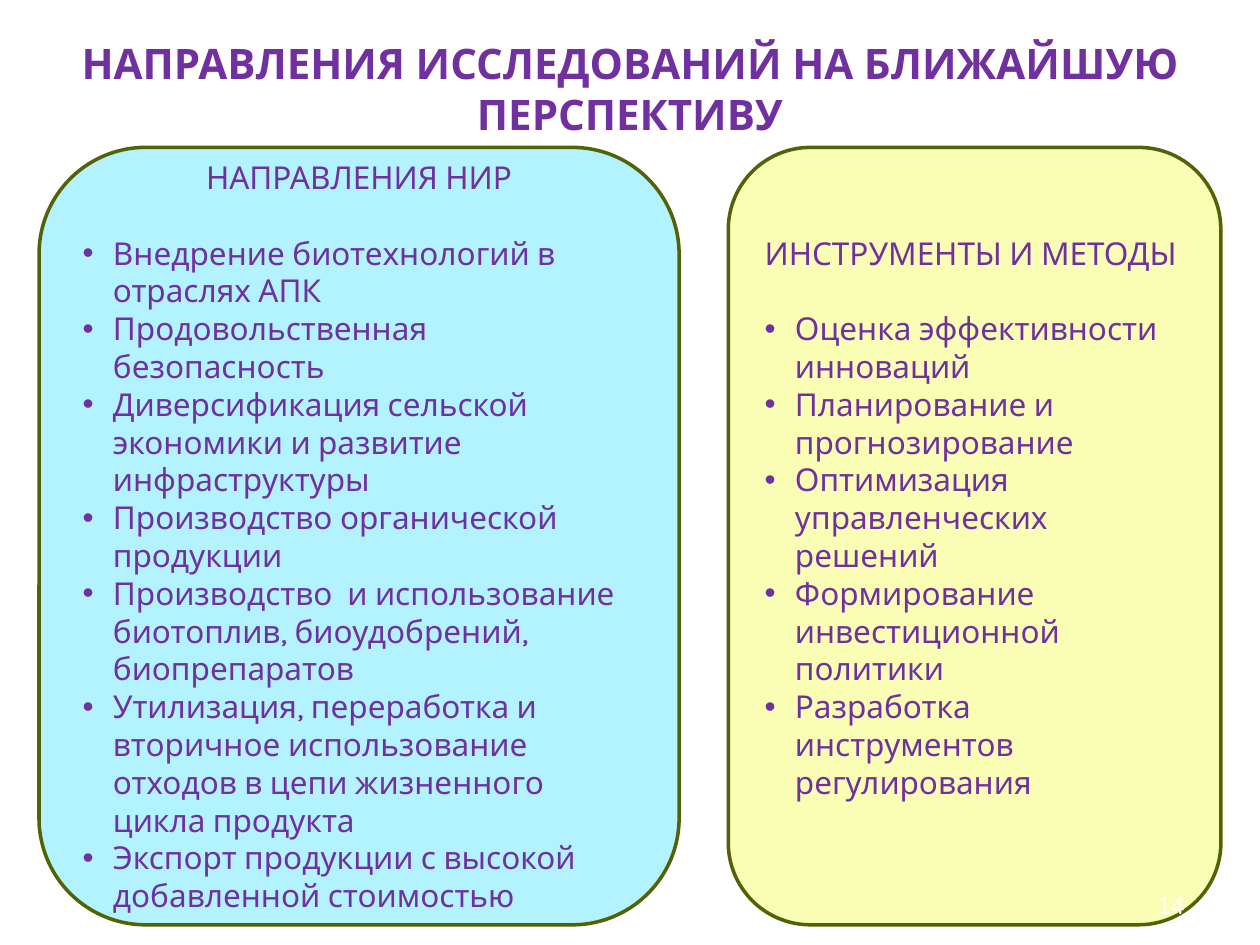
"""Build the slide on near-term research directions with two rounded panels."""
from lxml.etree import SubElement
from pptx import Presentation
from pptx.dml.color import RGBColor
from pptx.enum.shapes import MSO_SHAPE
from pptx.enum.text import MSO_ANCHOR as ANCHOR, PP_ALIGN as ALIGN
from pptx.oxml.ns import qn
from pptx.util import Inches, Pt

PURPLE = RGBColor(0x70, 0x30, 0xA0)
OLIVE = RGBColor(0x52, 0x62, 0x04)
YELLOW = RGBColor(0xFA, 0xFE, 0xB4)
CYAN = RGBColor(0xB3, 0xF2, 0xFF)
WHITE = RGBColor(0xFF, 0xFF, 0xFF)

MARGIN, TOP, PANEL_H = 0.31, 1.17, 6.17
LINE, INDENT = 21.6, 0.24

PANELS = [
    dict(left=5.78, width=3.91, fill=YELLOW, align=ALIGN.LEFT, bottom=0.05 + LINE / 72,
         heading="ИНСТРУМЕНТЫ И МЕТОДЫ",
         items=["Оценка эффективности инноваций",
                "Планирование и прогнозирование",
                "Оптимизация управленческих решений",
                "Формирование инвестиционной политики",
                "Разработка инструментов регулирования"]),
    dict(left=MARGIN, width=5.08, fill=CYAN, align=ALIGN.CENTER, bottom=0.05,
         heading="НАПРАВЛЕНИЯ НИР",
         items=["Внедрение биотехнологий в отраслях АПК",
                "Продовольственная безопасность",
                "Диверсификация сельской экономики и развитие инфраструктуры",
                "Производство органической продукции",
                "Производство  и использование биотоплив, биоудобрений, биопрепаратов",
                "Утилизация, переработка и вторичное использование отходов в цепи "
                "жизненного цикла продукта",
                "Экспорт продукции с высокой добавленной стоимостью"]),
]


def write(p, text, size, align, name="Karla", color=PURPLE, bold=False):
    p.alignment = align
    r = p.add_run()
    r.text = text
    for key, value in dict(size=Pt(size), name=name, bold=bold).items():
        setattr(r.font, key, value)
    r.font.color.rgb = color


def add_bullet(p):
    pPr = p._p.get_or_add_pPr()
    pPr.set("marL", str(Inches(INDENT)))
    pPr.set("indent", str(-Inches(INDENT)))
    SubElement(pPr, qn("a:buFont")).set("typeface", "Arial")
    SubElement(pPr, qn("a:buChar")).set("char", "•")


prs = Presentation()
prs.slide_width, prs.slide_height = Inches(10), Inches(7.5)
s = prs.slides.add_slide(prs.slide_layouts[5])

title = s.shapes.title
box = dict(left=MARGIN, top=0.23, width=10 - 2 * MARGIN, height=TOP - 0.23)
for key, value in box.items():
    setattr(title, key, Inches(value))
title.text_frame.vertical_anchor = ANCHOR.MIDDLE
write(title.text_frame.paragraphs[0],
      "НАПРАВЛЕНИЯ ИССЛЕДОВАНИЙ НА БЛИЖАЙШУЮ ПЕРСПЕКТИВУ", 24, ALIGN.CENTER, bold=True)

for panel in PANELS:
    sp = s.shapes.add_shape(MSO_SHAPE.ROUNDED_RECTANGLE, Inches(panel["left"]), Inches(TOP),
                            Inches(panel["width"]), Inches(PANEL_H))
    sp.shadow.inherit = False
    sp.fill.solid()
    sp.fill.fore_color.rgb = panel["fill"]
    sp.line.color.rgb = OLIVE
    sp.line.width = Pt(2)
    tf = sp.text_frame
    frame = dict(word_wrap=True, vertical_anchor=ANCHOR.MIDDLE,
                 margin_bottom=Inches(panel["bottom"]))
    for key, value in frame.items():
        setattr(tf, key, value)
    p = tf.paragraphs[0]
    p.space_after = Pt(LINE)
    write(p, panel["heading"], 18, panel["align"])
    for item in panel["items"]:
        p = tf.add_paragraph()
        write(p, item, 18, ALIGN.LEFT)
        add_bullet(p)

number = s.shapes.add_textbox(Inches(7.17), Inches(6.83), Inches(2.33), Inches(0.52))
tf = number.text_frame
tf.word_wrap = True
tf.vertical_anchor = ANCHOR.BOTTOM
write(tf.paragraphs[0], "14", 14, ALIGN.RIGHT, name="Arial", color=WHITE)

prs.save("out.pptx")
